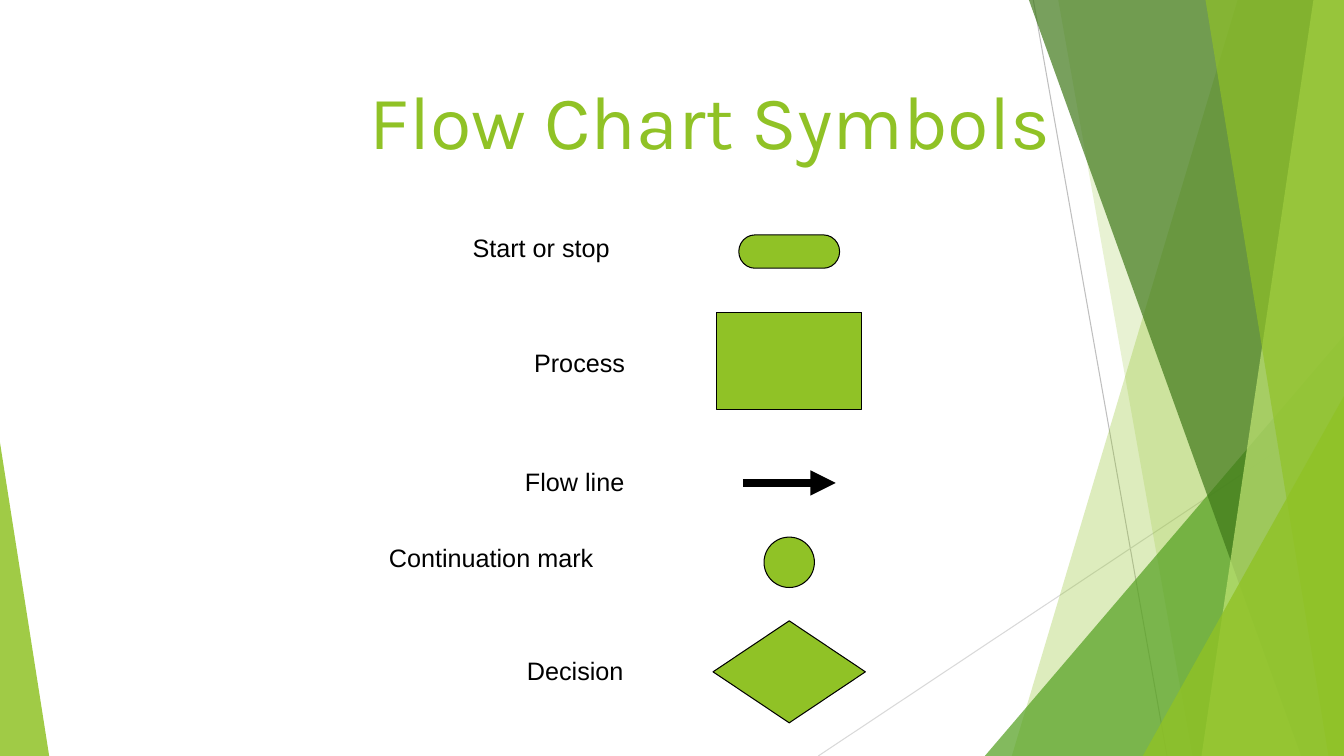
"""Build a slide that explains the common flow chart symbols."""
from lxml.etree import SubElement
from pptx import Presentation
from pptx.dml.color import RGBColor
from pptx.enum.shapes import MSO_CONNECTOR, MSO_SHAPE
from pptx.enum.text import MSO_ANCHOR, MSO_AUTO_SIZE, PP_ALIGN
from pptx.oxml.ns import qn
from pptx.util import Cm, Pt

SLIDE_WIDTH = 33.87
SLIDE_HEIGHT = 19.05
SYMBOL_CENTER = 19.89
LEAF = "90C226"
BLACK = "000000"

SYMBOLS = [
    (MSO_SHAPE.FLOWCHART_TERMINATOR, 6.34, 2.54, 0.84),
    (MSO_SHAPE.FLOWCHART_PROCESS, 9.09, 3.66, 2.44),
    (MSO_SHAPE.FLOWCHART_DECISION, 16.93, 3.84, 2.57),
    (MSO_SHAPE.FLOWCHART_CONNECTOR, 14.17, 1.27, 1.27),
]
LABELS = [
    ("Start or stop", 11.66, 5.72, 4.01),
    ("Process", 13.21, 8.64, 2.82),
    ("Flow line", 12.98, 11.63, 3.05),
    ("Continuation mark", 9.55, 13.54, 5.72),
    ("Decision", 13.03, 16.38, 2.97),
]


def color(hex_value):
    return RGBColor.from_string(hex_value)


def fill_shape(shape, hex_value, opacity=100):
    shape.shadow.inherit = False
    shape.fill.solid()
    shape.fill.fore_color.rgb = color(hex_value)
    if opacity < 100:
        solid = shape.fill._xPr.find(qn("a:solidFill"))
        SubElement(solid[0], qn("a:alpha"), val=str(opacity * 1000))


def add_facet(slide, top_x, bottom_x, hex_value, opacity):
    builder = slide.shapes.build_freeform(Cm(top_x), 0, scale=1.0)
    corners = [(SLIDE_WIDTH, 0), (SLIDE_WIDTH, SLIDE_HEIGHT), (bottom_x, SLIDE_HEIGHT)]
    builder.add_line_segments([(Cm(x), Cm(y)) for x, y in corners], close=True)
    facet = builder.convert_to_shape()
    fill_shape(facet, hex_value, opacity)
    facet.line.fill.background()


def add_corner_triangle(slide, left, top, width, apex, hex_value, opacity):
    triangle = slide.shapes.add_shape(
        MSO_SHAPE.ISOSCELES_TRIANGLE,
        Cm(left), Cm(top), Cm(width), Cm(SLIDE_HEIGHT - top))
    triangle.adjustments[0] = apex
    fill_shape(triangle, hex_value, opacity)
    triangle.line.fill.background()


def add_line(slide, start, end, hex_value, width, arrow=False):
    connector = slide.shapes.add_connector(
        MSO_CONNECTOR.STRAIGHT, *map(Cm, start), *map(Cm, end))
    connector.line.color.rgb = color(hex_value)
    connector.line.width = Pt(width)
    if arrow:
        SubElement(connector.line._get_or_add_ln(), qn("a:tailEnd"), type="triangle")
    SubElement(connector._element.spPr, qn("a:effectLst"))


def add_symbol(slide, kind, center_y, width, height):
    symbol = slide.shapes.add_shape(
        kind, Cm(SYMBOL_CENTER - width / 2), Cm(center_y - height / 2),
        Cm(width), Cm(height))
    fill_shape(symbol, LEAF)
    symbol.line.color.rgb = color(BLACK)
    symbol.line.width = Pt(0.75)


def add_text(slide, text, left, top, width, height, font, size, hex_value):
    box = slide.shapes.add_textbox(Cm(left), Cm(top), Cm(width), Cm(height))
    box.text_frame.vertical_anchor = MSO_ANCHOR.TOP
    paragraph = box.text_frame.paragraphs[0]
    paragraph.text = text
    paragraph.font.name = font
    paragraph.font.size = Pt(size)
    paragraph.font.color.rgb = color(hex_value)
    return box.text_frame


def add_title(slide):
    frame = add_text(slide, "Flow Chart Symbols", 7.42, 1.73, 20.96, 3.99,
                     "Karla", 54, LEAF)
    frame.word_wrap = True
    frame.paragraphs[0].alignment = PP_ALIGN.CENTER


def add_label(slide, text, left, top, width):
    frame = add_text(slide, text, left, top, width, 1.02, "Arial", 18, BLACK)
    frame.word_wrap = False
    frame.auto_size = MSO_AUTO_SIZE.SHAPE_TO_FIT_TEXT


def add_backdrop(slide):
    add_line(slide, (26.04, 0), (29.41, SLIDE_HEIGHT), "BFBFBF", 0.75)
    add_line(slide, (SLIDE_WIDTH, 10.24), (20.62, SLIDE_HEIGHT), "D9D9D9", 0.75)
    add_facet(slide, 31.19, 25.5, LEAF, 30)
    add_facet(slide, 26.67, 30.05, LEAF, 20)
    add_corner_triangle(slide, 24.82, 8.46, 9.05, 1, "54A021", 72)
    add_facet(slide, 25.93, 32.79, "3F7819", 70)
    add_facet(slide, 33.1, 30.28, "C0E474", 70)
    add_facet(slide, 30.38, 33.48, LEAF, 65)
    add_corner_triangle(slide, 28.8, 9.98, 5.07, 1, LEAF, 80)
    add_corner_triangle(slide, 0, 11.15, 1.24, 0, LEAF, 85)


def main():
    presentation = Presentation()
    presentation.slide_width = Cm(SLIDE_WIDTH)
    presentation.slide_height = Cm(SLIDE_HEIGHT)
    slide = presentation.slides.add_slide(presentation.slide_layouts[6])
    add_backdrop(slide)
    add_title(slide)
    for symbol in SYMBOLS:
        add_symbol(slide, *symbol)
    add_line(slide, (18.72, 12.17), (21.06, 12.17), BLACK, 6, arrow=True)
    for label in LABELS:
        add_label(slide, *label)
    presentation.save("out.pptx")


if __name__ == "__main__":
    main()
